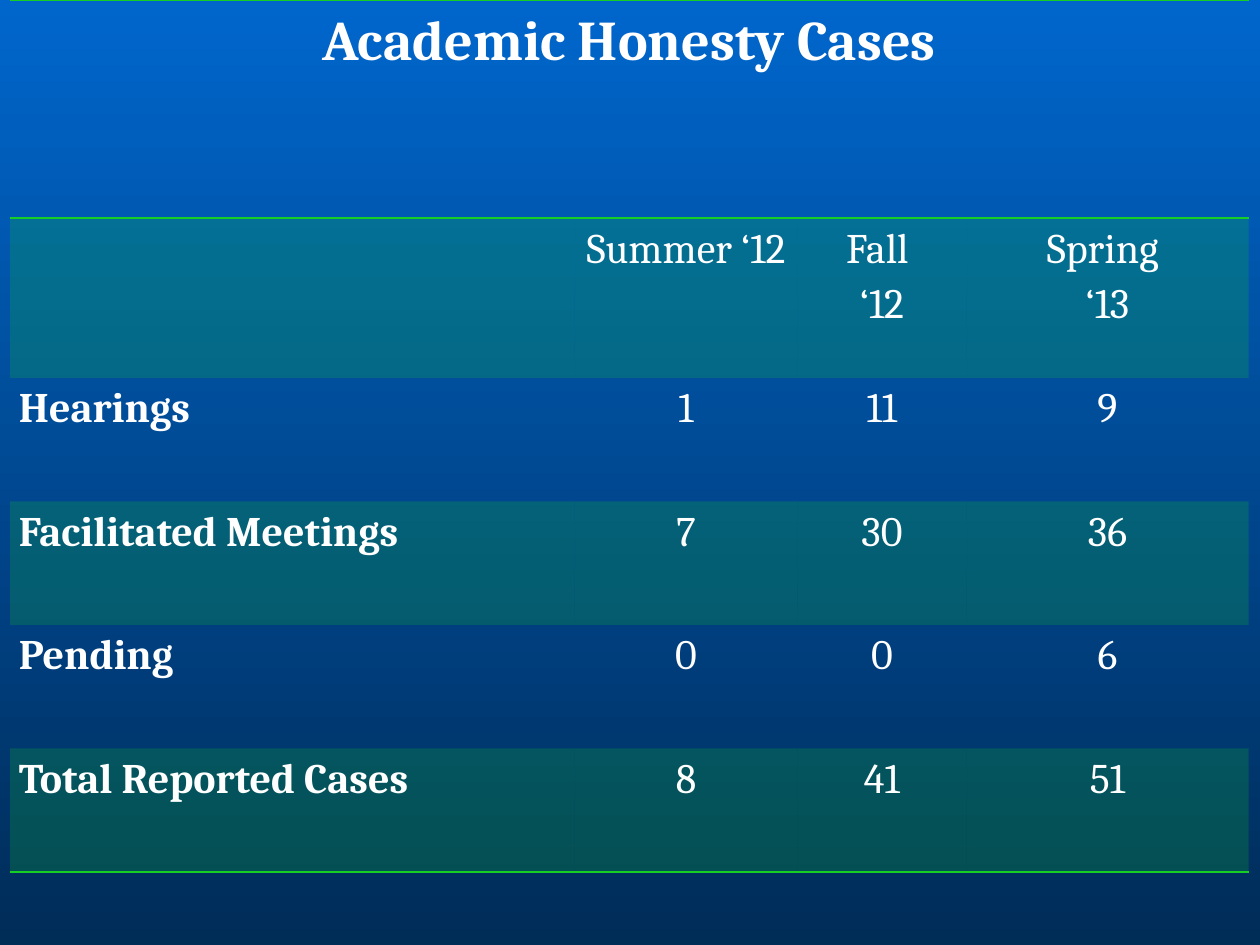
from lxml import etree
from pptx import Presentation
from pptx.dml.color import RGBColor
from pptx.enum.text import PP_ALIGN
from pptx.oxml.ns import qn
from pptx.util import Inches, Pt

CENTER, LEFT = PP_ALIGN.CENTER, PP_ALIGN.LEFT
COLORS = {"top": "0066CC", "bottom": "002C58", "green": "16CE24", "text": "FFFFFF"}
NO_STYLE = "{2D5ABB26-0587-4C30-8999-92F81FD0307C}"
MARGINS = {"margin_left": Inches(0.07), "margin_right": Inches(0.07),
           "margin_top": 0, "margin_bottom": 0}
COL_WIDTHS = [4.48, 1.77, 1.34, 2.24]
ROW_HEIGHTS = [1.73, 1.27, 0.98, 0.98, 0.98, 0.98]
ROWS = [
    ["Academic Honesty Cases", "", "", ""],
    ["", "Summer ‘12", "Fall \n‘12", "Spring \n‘13"],
    ["Hearings", "1", "11", "9"],
    ["Facilitated Meetings", "7", "30", "36"],
    ["Pending", "0", "0", "6"],
    ["Total Reported Cases", "8", "41", "51"],
]
BORDERS = {0: ["a:lnB", "a:lnT"], len(ROWS) - 1: ["a:lnB"]}


def add_border(cell, side):
    ln = etree.Element(qn(side), w=str(Pt(1)))
    fill = etree.SubElement(ln, qn("a:solidFill"))
    etree.SubElement(fill, qn("a:srgbClr"), val=COLORS["green"])
    cell._tc.get_or_add_tcPr().insert(0, ln)


prs = Presentation()
prs.slide_width, prs.slide_height = Inches(10), Inches(7.5)
s = prs.slides.add_slide(prs.slide_layouts[6])

bg = s.background.fill
bg.gradient()
bg.gradient_angle = 270
for stop, name in zip(bg.gradient_stops, ["top", "bottom"]):
    stop.color.rgb = RGBColor.from_string(COLORS[name])

frame = s.shapes.add_table(len(ROWS), len(COL_WIDTHS), Inches(0.08), 0,
                           Inches(sum(COL_WIDTHS)), Inches(sum(ROW_HEIGHTS)))
table = frame.table
table._tbl.tblPr.find(qn("a:tableStyleId")).text = NO_STYLE
table.first_row = table.horz_banding = False
for col, width in zip(table.columns, COL_WIDTHS):
    col.width = Inches(width)
for row, height in zip(table.rows, ROW_HEIGHTS):
    row.height = Inches(height)

for i, values in enumerate(ROWS):
    for j, value in enumerate(values):
        cell = table.cell(i, j)
        for name, margin in MARGINS.items():
            setattr(cell, name, margin)
        if i % 2:
            cell.fill.solid()
            cell.fill.fore_color.rgb = RGBColor.from_string(COLORS["green"])
            color = cell._tc.tcPr.find(".//" + qn("a:srgbClr"))
            etree.SubElement(color, qn("a:alpha"), val="20000")
        else:
            cell.fill.background()
        for side in BORDERS.get(i, []):
            add_border(cell, side)
        if not value:
            continue
        cell.text = value
        font = {"name": "Cambria", "size": Pt(24 if i else 32), "bold": j == 0}
        for p in cell.text_frame.paragraphs:
            p.alignment = LEFT if i and j == 0 else CENTER
            p.line_spacing = 1.15
            for r in p.runs:
                for name, setting in font.items():
                    setattr(r.font, name, setting)
                r.font.color.rgb = RGBColor.from_string(COLORS["text"])

table.cell(0, 0).merge(table.cell(0, len(COL_WIDTHS) - 1))

prs.save("out.pptx")
